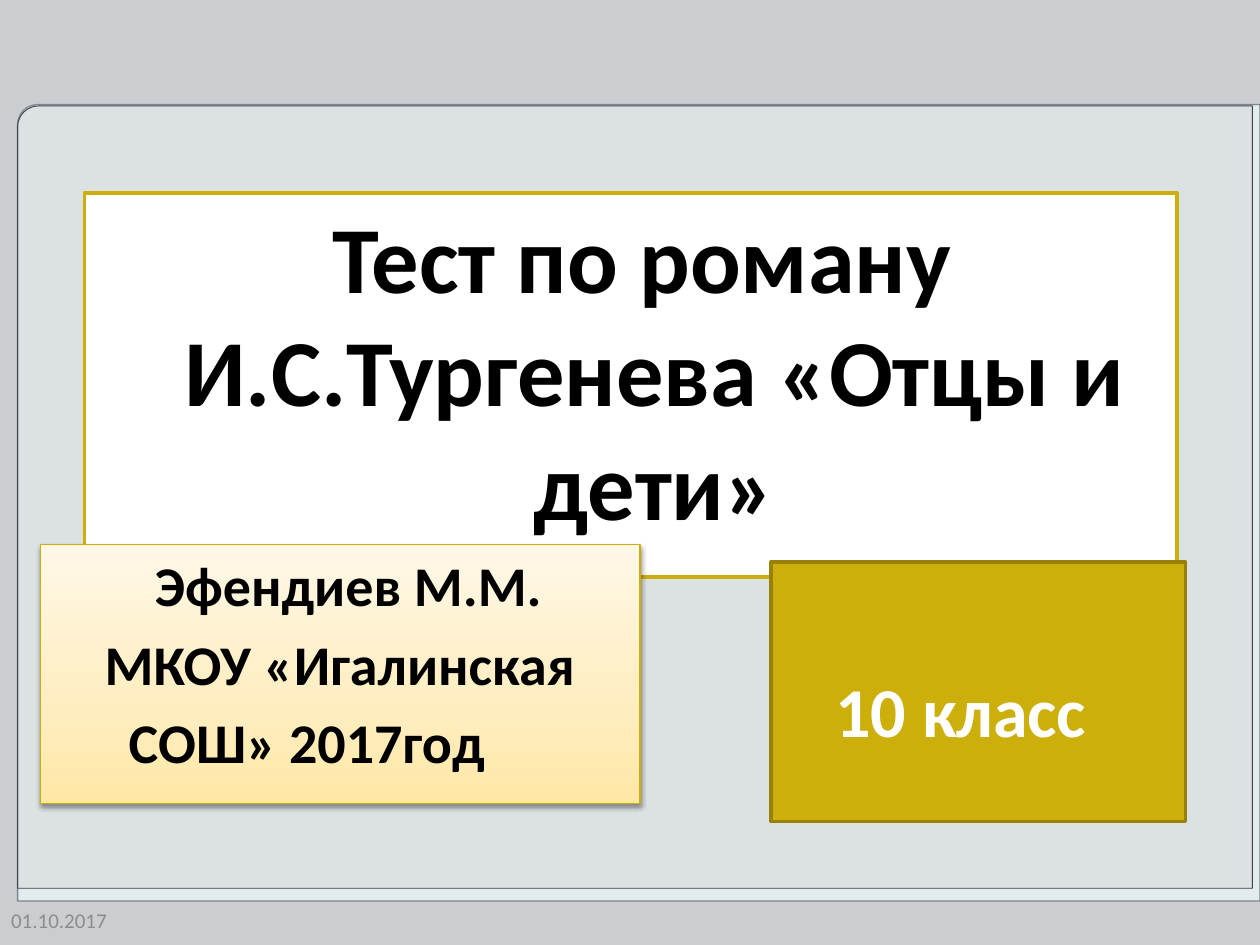
import pptx
import pptx.util
import pptx.dml.color
import pptx.enum.shapes
import pptx.enum.text
import pptx.oxml.ns
from lxml import etree

Inches, Pt = pptx.util.Inches, pptx.util.Pt
RGBColor = pptx.dml.color.RGBColor
SHAPE = pptx.enum.shapes.MSO_SHAPE
ALIGN = pptx.enum.text.PP_ALIGN
ANCHOR = pptx.enum.text.MSO_ANCHOR
qn = pptx.oxml.ns.qn

FONT = "Calibri"
BACKGROUND = RGBColor(0xCB, 0xCE, 0xD1)
BACK_SHEET = RGBColor(0xE2, 0xEC, 0xEF)
BACK_EDGE = RGBColor(0x7E, 0x84, 0x8D)
FRONT_SHEET = RGBColor(0xD8, 0xD8, 0xD8)
FRONT_EDGE = RGBColor(0x3F, 0x42, 0x47)
GOLD = RGBColor(0xCC, 0xAF, 0x0A)
DARK_GOLD = RGBColor(0x97, 0x81, 0x07)
CREAM_STOPS = [
    (0, RGBColor(0xFF, 0xE7, 0xA5)),
    (35, RGBColor(0xFF, 0xED, 0xBF)),
    (100, RGBColor(0xFF, 0xF8, 0xE7)),
]
WHITE = RGBColor(0xFF, 0xFF, 0xFF)
BLACK = RGBColor(0, 0, 0)
GREY = RGBColor(0x8C, 0x8C, 0x8C)

WIDTH, HEIGHT = Inches(10), Inches(7.5)


def place(part, box):
    part.left, part.top, part.width, part.height = (Inches(v) for v in box)


def paint(part, fill, line, weight):
    if fill is not None:
        part.fill.solid()
        part.fill.fore_color.rgb = fill
    part.line.color.rgb = line
    part.line.width = Pt(weight)


def write(frame, text, size, color, bold=True, align=ALIGN.LEFT,
          left=0, hanging=0, first=False):
    """Write one paragraph; left and hanging are indents in inches."""
    paragraph = frame.paragraphs[0] if first else frame.add_paragraph()
    paragraph.alignment = align
    paragraph.space_before = Pt(0 if first else size * 0.2)
    props = paragraph._p.get_or_add_pPr()
    props.set("marL", str(Inches(left)))
    props.set("indent", str(-Inches(hanging)))
    etree.SubElement(props, qn("a:buNone"))
    run = paragraph.add_run()
    run.text = text
    run.font.name = FONT
    run.font.size = Pt(size)
    run.font.bold = bold
    run.font.color.rgb = color


def prepare_frame(part, anchor=ANCHOR.TOP):
    frame = part.text_frame
    frame.word_wrap = True
    frame.auto_size = pptx.enum.text.MSO_AUTO_SIZE.NONE
    frame.vertical_anchor = anchor
    return frame


def add_sheet(slide, preset, box, corners, rotation, fill, edge, weight):
    sheet = slide.shapes.add_shape(preset, 0, 0, 0, 0)
    place(sheet, box)
    for index, corner in enumerate(corners):
        sheet.adjustments[index] = corner
    sheet.rotation = rotation
    sheet._element.spPr.find(qn("a:xfrm")).set("flipH", "1")
    sheet.shadow.inherit = False
    paint(sheet, fill, edge, weight)
    return sheet


def add_backdrop(slide):
    """Two stacked sheets, kept behind the placeholders."""
    slide.background.fill.solid()
    slide.background.fill.fore_color.rgb = BACKGROUND
    back = add_sheet(slide, SHAPE.SNIP_ROUND_RECTANGLE, (1.91, -0.94, 6.32, 9.86),
                     (0.025, 0), 270, BACK_SHEET, BACK_EDGE, 0.75)
    front = add_sheet(slide, SHAPE.ROUND_1_RECTANGLE, (0.14, 0.84, 9.8, 6.21),
                      (0.027,), 0, FRONT_SHEET, FRONT_EDGE, 0.5)
    tint = front._element.spPr.find(qn("a:solidFill"))[0]
    etree.SubElement(tint, qn("a:alpha"), val="50000")
    tree = slide.shapes._spTree
    for sheet in (front, back):
        tree.remove(sheet._element)
        tree.insert(2, sheet._element)


def add_date(slide, box):
    date = slide.shapes.add_textbox(0, 0, 0, 0)
    place(date, box)
    write(prepare_frame(date, ANCHOR.MIDDLE), "01.10.2017", 12, GREY,
          bold=False, first=True)


def fill_title(title, box):
    place(title, box)
    paint(title, WHITE, GOLD, 2)
    write(prepare_frame(title), "Тест по роману И.С.Тургенева «Отцы и дети»",
          54, BLACK, align=ALIGN.CENTER, left=0.38, hanging=0.2, first=True)


def fill_author(author, box):
    place(author, box)
    # Cream gradient, darker at the bottom
    author.fill.gradient()
    author.fill.gradient_angle = 90
    stops = author._element.spPr.find(qn("a:gradFill")).find(qn("a:gsLst"))
    for stop in list(stops):
        stops.remove(stop)
    for position, color in CREAM_STOPS:
        stop = etree.SubElement(stops, qn("a:gs"), pos=str(position * 1000))
        etree.SubElement(stop, qn("a:srgbClr"), val=str(color))
    paint(author, None, GOLD, 0.75)
    # Soft shadow below the card
    effects = etree.SubElement(author._element.spPr, qn("a:effectLst"))
    shadow = etree.SubElement(effects, qn("a:outerShdw"), blurRad=str(Pt(3.1)),
                              dist=str(Pt(1.6)), dir="5400000", rotWithShape="0")
    black = etree.SubElement(shadow, qn("a:srgbClr"), val=str(BLACK))
    etree.SubElement(black, qn("a:alpha"), val="38000")

    frame = prepare_frame(author)
    lines = [("Эфендиев М.М.", 0.81), ("МКОУ «Игалинская", 0.41),
             ("СОШ» 2017год", 0.6)]
    for index, (text, left) in enumerate(lines):
        write(frame, text, 32, BLACK, left=left, first=index == 0)


def fill_grade(grade, box):
    place(grade, box)
    paint(grade, GOLD, DARK_GOLD, 2)
    frame = prepare_frame(grade)
    frame.margin_top = Inches(0.84)
    write(frame, "10 класс", 40, WHITE, left=0.41, first=True)


def main():
    deck = pptx.Presentation()
    deck.slide_width, deck.slide_height = WIDTH, HEIGHT
    slide = deck.slides.add_slide(deck.slide_layouts.get_by_name("Two Content"))
    title, author, grade = slide.placeholders
    add_backdrop(slide)
    add_date(slide, (-0.01, 7.1, 1.17, 0.4))
    fill_title(title, (0.67, 1.53, 8.67, 3.05))
    fill_author(author, (0.32, 4.32, 4.76, 2.06))
    fill_grade(grade, (6.12, 4.46, 3.29, 2.06))
    deck.save("out.pptx")


if __name__ == "__main__":
    main()
